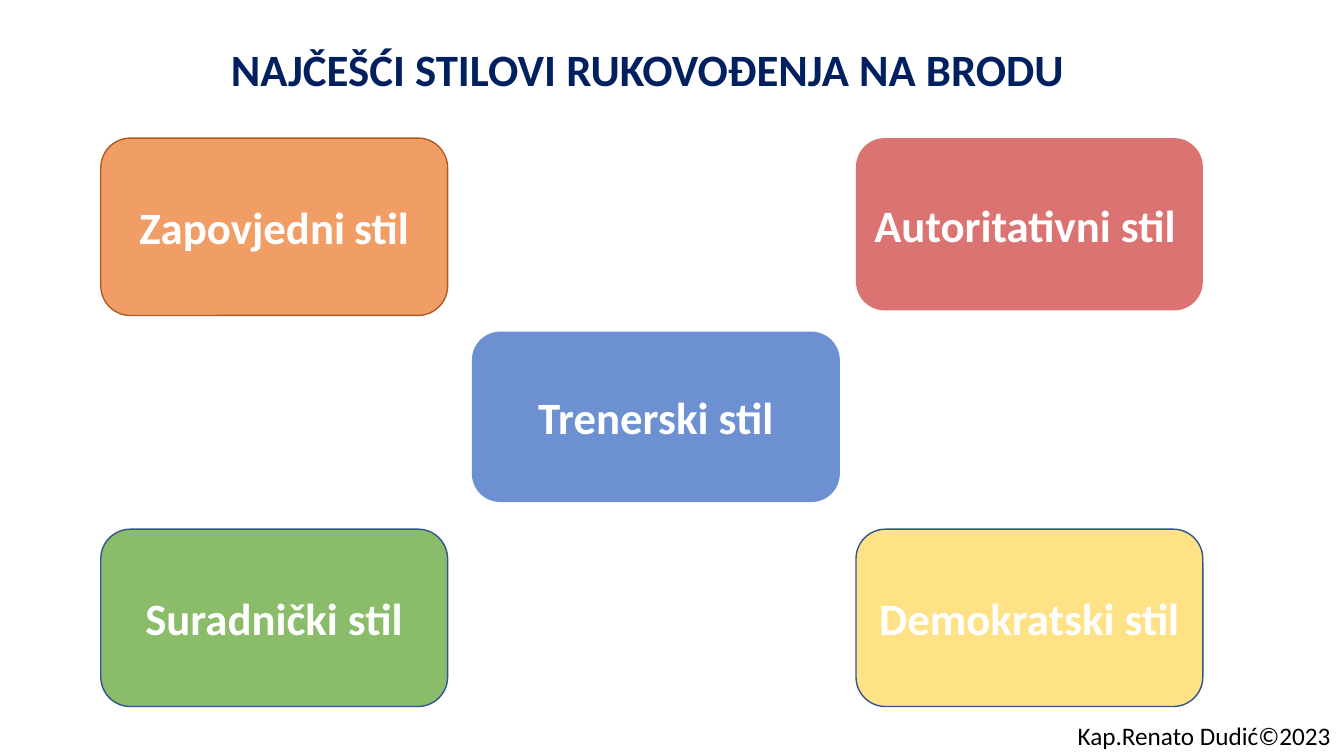
from lxml.etree import SubElement
from pptx import Presentation
from pptx.dml.color import RGBColor
from pptx.enum.shapes import MSO_SHAPE
from pptx.enum.text import MSO_ANCHOR, MSO_AUTO_SIZE, PP_ALIGN
from pptx.oxml.ns import qn
from pptx.util import Inches, Pt

WHITE = RGBColor(0xFF, 0xFF, 0xFF)
BLACK = RGBColor(0x00, 0x00, 0x00)
NAVY = RGBColor(0x00, 0x20, 0x60)
BLUE = RGBColor(0x44, 0x72, 0xC4)
ORANGE = RGBColor(0xED, 0x7D, 0x31)
RED = RGBColor(0xC0, 0x00, 0x00)
GREEN = RGBColor(0x70, 0xAD, 0x47)
YELLOW = RGBColor(0xFF, 0xD9, 0x66)
BROWN_LINE = RGBColor(0xAF, 0x5C, 0x24)
BLUE_LINE = RGBColor(0x32, 0x54, 0x91)

FONT = "Calibri"
LEFT, RIGHT = 1, 8.49
TOP, BOTTOM = 1.37, 5.25
CARD_W, CARD_H = 3.44, 1.76

STYLES = [
    ((4.68, 3.29, 3.65, 1.69), BLUE, 78, None, PP_ALIGN.CENTER,
     [("Trenerski stil", 32)]),
    ((LEFT, TOP, CARD_W, CARD_H), ORANGE, 74, BROWN_LINE, PP_ALIGN.CENTER,
     [("Zapovjedni", 32), (" ", 28), ("stil", 32)]),
    ((RIGHT, TOP, CARD_W, 1.71), RED, 55, None, PP_ALIGN.LEFT,
     [("Autoritativni stil", 32)]),
    ((LEFT, BOTTOM, CARD_W, CARD_H), GREEN, 81, BLUE_LINE, PP_ALIGN.CENTER,
     [("Suradnički stil", 32)]),
    ((RIGHT, BOTTOM, CARD_W, CARD_H), YELLOW, 79, BLUE_LINE, PP_ALIGN.CENTER,
     [("Demokratski stil", 32)]),
]


def add_runs(p, runs, color, bold, align):
    p.alignment = align
    for text, size in runs:
        r = p.add_run()
        r.text = text
        r.font.name = FONT
        r.font.size = Pt(size)
        r.font.bold = bold
        r.font.color.rgb = color


def add_title(s, box):
    sp = s.shapes.title
    sp.left, sp.top, sp.width, sp.height = map(Inches, box)
    tf = sp.text_frame
    tf.auto_size = MSO_AUTO_SIZE.NONE
    tf.word_wrap = True
    tf.vertical_anchor = MSO_ANCHOR.TOP
    tf.margin_left = Inches(0.2)
    add_runs(tf.paragraphs[0], [("NAJČEŠĆI STILOVI RUKOVOĐENJA NA BRODU", 32)],
             NAVY, True, PP_ALIGN.LEFT)


def add_style_card(s, box, fill, opacity, line, align, runs):
    sp = s.shapes.add_shape(MSO_SHAPE.ROUNDED_RECTANGLE, *map(Inches, box))
    sp.shadow.inherit = False
    sp.fill.solid()
    sp.fill.fore_color.rgb = fill
    color = sp.element.spPr.find(qn("a:solidFill"))[0]
    SubElement(color, qn("a:alpha")).set("val", str(opacity * 1000))
    if line is None:
        sp.line.fill.background()
    else:
        sp.line.color.rgb = line
        sp.line.width = Pt(1)
    tf = sp.text_frame
    tf.word_wrap = True
    tf.vertical_anchor = MSO_ANCHOR.MIDDLE
    add_runs(tf.paragraphs[0], runs, WHITE, True, align)


def add_author(s, box):
    tf = s.shapes.add_textbox(*map(Inches, box)).text_frame
    tf.word_wrap = False
    tf.auto_size = MSO_AUTO_SIZE.SHAPE_TO_FIT_TEXT
    add_runs(tf.paragraphs[0], [("Kap.Renato Dudić©2023", 18)],
             BLACK, False, PP_ALIGN.LEFT)


def main():
    prs = Presentation()
    prs.slide_width, prs.slide_height = Inches(13.33), Inches(7.5)
    s = prs.slides.add_slide(prs.slide_layouts[5])
    add_title(s, (2.09, 0.36, 8.83, 0.64))
    for style in STYLES:
        add_style_card(s, *style)
    add_author(s, (10.59, 7.1, 2.74, 0.4))
    prs.save("out.pptx")


if __name__ == "__main__":
    main()
